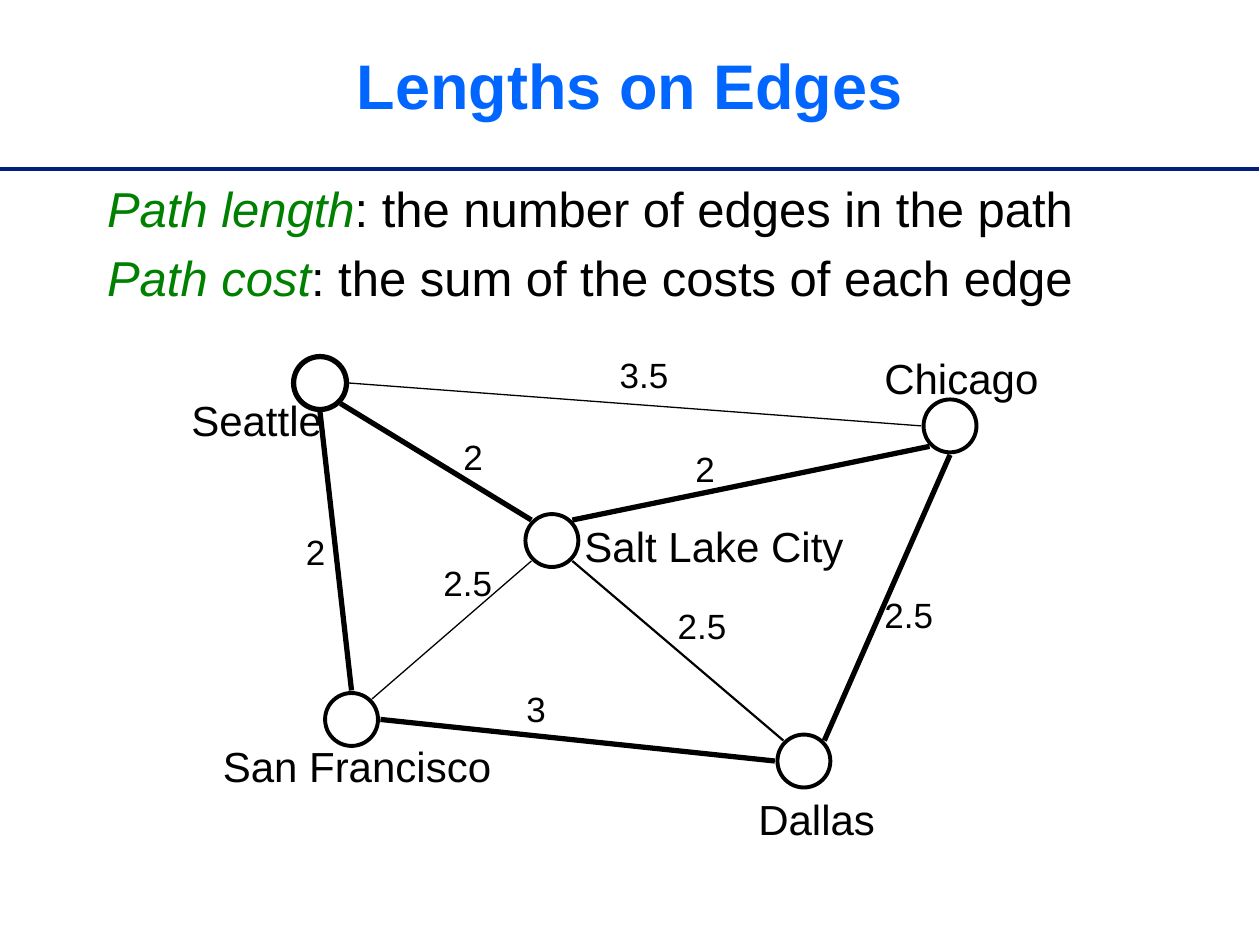
from math import cos, radians, sin

from lxml import etree
from pptx import Presentation
from pptx.dml.color import RGBColor
from pptx.enum import shapes, text
from pptx.oxml import parse_xml
from pptx.oxml.ns import qn
from pptx.util import Inches, Pt

FONT = "Arial"
BLACK, WHITE, GREEN = "000000", "FFFFFF", "008000"
NODE_SIZE = 0.42
EDGE_REACH = 0.23  # from a node's centre to where its edges end
DIRECTIONS = {"E": 0, "SE": 45, "S": 90, "SW": 135,
              "W": 180, "NW": 225, "N": 270, "NE": 315}

# city: centre, outline width, left and top of the label
CITIES = {
    "Seattle": ((2.54, 3.04), 3, (1.42, 3.08)),
    "San Francisco": ((2.79, 5.71), 2.25, (1.67, 5.83)),
    "Salt Lake City": ((4.38, 4.29), 2.25, (4.54, 4.08)),
    "Dallas": ((6.38, 6.04), 2.25, (5.92, 6.25)),
    "Chicago": ((7.54, 3.38), 2.25, (6.92, 2.75)),
}
# city, side, city, side, line width, cost, left and top of the cost
EDGES = [
    ("San Francisco", "N", "Seattle", "S", 3, "2", (2.33, 4.16)),
    ("Chicago", "S", "Dallas", "NE", 3, "2.5", (6.92, 4.66)),
    ("Chicago", "W", "Seattle", "E", 0.75, "3.5", (4.82, 2.76)),
    ("Seattle", "SE", "Salt Lake City", "NW", 3, "2", (3.58, 3.41)),
    ("San Francisco", "NE", "Salt Lake City", "SW", 0.75, "2.5", (3.42, 4.41)),
    ("Salt Lake City", "SE", "Dallas", "NW", 1.25, "2.5", (5.28, 4.75)),
    ("Salt Lake City", "NE", "Chicago", "SW", 3, "2", (5.42, 3.5)),
    ("Dallas", "W", "San Francisco", "E", 3, "3", (4.08, 5.41)),
]
TITLE_SHADOW = (
    '<a:effectLst xmlns:a="http://schemas.openxmlformats.org/drawingml/2006/main">'
    '<a:outerShdw blurRad="38100" dist="38100" dir="2700000" algn="tl">'
    '<a:srgbClr val="000000"><a:alpha val="60000"/></a:srgbClr>'
    '</a:outerShdw></a:effectLst>')


def rgb(color):
    return RGBColor.from_string(color)


def style(run, size, color, bold=False, italic=False):
    run.font.name = FONT
    run.font.size = Pt(size)
    run.font.color.rgb = rgb(color)
    run.font.bold = bold
    run.font.italic = italic


def place(shape, box):
    shape.left, shape.top, shape.width, shape.height = map(Inches, box)


def add_line(slide, start, end, color, width):
    line = slide.shapes.add_connector(
        shapes.MSO_CONNECTOR.STRAIGHT, *map(Inches, (*start, *end)))
    line.line.color.rgb = rgb(color)
    line.line.width = Pt(width)
    etree.SubElement(line._element.spPr, qn("a:effectLst"))


def add_label(slide, wording, corner, size, box_size):
    label = slide.shapes.add_textbox(*map(Inches, (*corner, *box_size)))
    label.text_frame.word_wrap = False
    label.text_frame.auto_size = text.MSO_AUTO_SIZE.SHAPE_TO_FIT_TEXT
    label.text_frame.text = wording
    style(label.text_frame.paragraphs[0].runs[0], size, BLACK)


def fill_title(slide, box):
    title = slide.shapes.title
    place(title, box)
    frame = title.text_frame
    frame.text = "Lengths on Edges"
    frame.auto_size = text.MSO_AUTO_SIZE.NONE
    frame.vertical_anchor = text.MSO_ANCHOR.MIDDLE
    heading = frame.paragraphs[0]
    heading.alignment = text.PP_ALIGN.CENTER
    heading.line_spacing = 0.9
    run = heading.runs[0]
    style(run, 36, "0066FF", bold=True)
    run.font._element.find(qn("a:solidFill")).addnext(parse_xml(TITLE_SHADOW))


def fill_definitions(slide, box):
    definitions = slide.placeholders[1]
    place(definitions, box)
    frame = definitions.text_frame
    frame.auto_size = text.MSO_AUTO_SIZE.NONE
    entries = [("Path length", ": the number of edges in the path"),
               ("Path cost", ": the sum of the costs of each edge")]
    for i, (term, meaning) in enumerate(entries):
        entry = frame.paragraphs[0] if i == 0 else frame.add_paragraph()
        entry.line_spacing = 0.9
        entry.space_before = Pt(9)
        # Hanging indent without a bullet
        properties = entry._p.get_or_add_pPr()
        properties.set("marL", str(Inches(0.25)))
        properties.set("indent", str(-Inches(0.25)))
        etree.SubElement(properties, qn("a:buNone"))
        for wording, color, italic in ((term, GREEN, True), (meaning, BLACK, False)):
            run = entry.add_run()
            run.text = wording
            style(run, 28, color, italic=italic)


def edge_end(city, side, origin):
    (x, y), angle = CITIES[city][0], radians(DIRECTIONS[side])
    return (origin[0] + x + EDGE_REACH * cos(angle),
            origin[1] + y + EDGE_REACH * sin(angle))


def draw_graph(slide, origin=(0, 0)):
    def shifted(point):
        return origin[0] + point[0], origin[1] + point[1]

    # Edges
    for city, side, other, other_side, width, _, _ in EDGES:
        add_line(slide, edge_end(city, side, origin),
                 edge_end(other, other_side, origin), BLACK, width)
    # Nodes
    for centre, width, _ in CITIES.values():
        x, y = shifted(centre)
        node = slide.shapes.add_shape(shapes.MSO_SHAPE.OVAL, 0, 0, 0, 0)
        place(node, (x - NODE_SIZE / 2, y - NODE_SIZE / 2, NODE_SIZE, NODE_SIZE))
        node.shadow.inherit = False
        node.fill.solid()
        node.fill.fore_color.rgb = rgb(WHITE)
        node.line.color.rgb = rgb(BLACK)
        node.line.width = Pt(width)
    # City names
    label_widths = {"Seattle": 1.24, "San Francisco": 2.33, "Salt Lake City": 2.26,
                    "Dallas": 1.13, "Chicago": 1.43}
    for city, (_, _, corner) in CITIES.items():
        add_label(slide, city, shifted(corner), 24, (label_widths[city], 0.5))
    # Edge costs
    for *_, cost, corner in EDGES:
        cost_width = 0.36 if len(cost) == 1 else 0.59
        add_label(slide, cost, shifted(corner), 20, (cost_width, 0.43))


def main():
    deck = Presentation()
    deck.slide_width, deck.slide_height = Inches(10), Inches(7.5)
    slide = deck.slides.add_slide(deck.slide_layouts[1])
    add_line(slide, (0, 1.34), (9.99, 1.34), "001F7E", 2)
    fill_title(slide, (0.75, 0.08, 8.5, 1.25))
    fill_definitions(slide, (0.75, 1.42, 8.5, 1.08))
    draw_graph(slide)
    deck.save("out.pptx")


if __name__ == "__main__":
    main()
